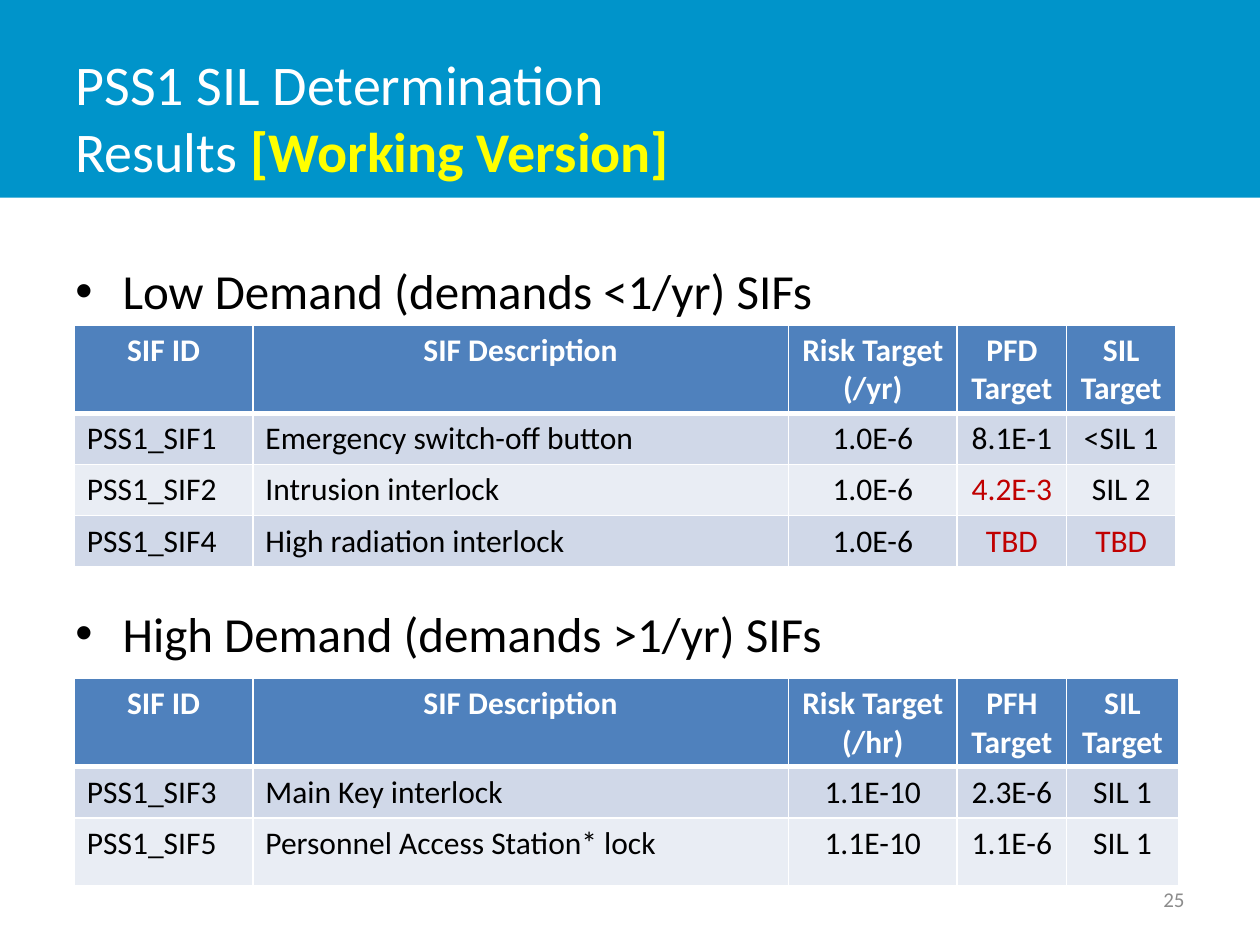
import pptx
import pptx.util
import pptx.dml.color
import pptx.enum.shapes
import pptx.enum.text
import pptx.oxml
import pptx.oxml.ns

Pt = pptx.util.Pt
ALIGN = pptx.enum.text.PP_ALIGN
ANCHOR = pptx.enum.text.MSO_ANCHOR
WHITE, BLACK, RED = "FFFFFF", "000000", "C00000"
HEAD, BANDS = "4F81BD", ("D0D8E8", "E9EDF4")


def color(text):
    return pptx.dml.color.RGBColor.from_string(text)


def node(xml):
    """Parse one drawing element, given without its namespace declaration."""
    tag, rest = xml.split(" ", 1)
    return pptx.oxml.parse_xml(f"{tag} {pptx.oxml.ns.nsdecls('a')} {rest}")


class Deck:
    """Holds the text style and the current slide."""

    base = {"name": "Calibri", "size": Pt(18), "bold": False, "color": BLACK}

    def __init__(self, wide, high):
        self.file = pptx.Presentation()
        self.file.slide_width, self.file.slide_height = Pt(wide), Pt(high)
        self.slide = self.file.slides.add_slide(self.file.slide_layouts[6])

    def style(self, font, **form):
        for key, value in {**self.base, **form}.items():
            if key == "color":
                font.color.rgb = color(value)
            else:
                setattr(font, key, value)

    def run(self, para, text, **form):
        run = para.add_run()
        run.text = text
        self.style(run.font, **form)

    def band(self, *area, fill):
        kind = pptx.enum.shapes.MSO_SHAPE.RECTANGLE
        shape = self.slide.shapes.add_shape(kind, *map(Pt, area))
        shape.shadow.inherit = False
        shape.fill.solid()
        shape.fill.fore_color.rgb = color(fill)
        shape.line.fill.background()

    def box(self, *area, anchor=ANCHOR.TOP):
        frame = self.slide.shapes.add_textbox(*map(Pt, area)).text_frame
        frame.word_wrap = True
        frame.vertical_anchor = anchor
        return frame

    def bullets(self, frame, items, gap, **form):
        for i, text in enumerate(items):
            para = frame.add_paragraph() if i else frame.paragraphs[0]
            if i:
                para.space_before = Pt(gap)
            props = para._p.get_or_add_pPr()
            props.set("marL", str(Pt(27)))
            props.set("indent", str(-Pt(27)))
            props.append(node('<a:buFont typeface="Arial"/>'))
            props.append(node('<a:buChar char="•"/>'))
            self.run(para, text, **form)

    def edges(self, cell, **widths):
        props = cell._tc.get_or_add_tcPr()
        for i, side in enumerate("LRTB"):
            width = Pt(widths.get(side, 1))
            props.insert(i, node(
                f'<a:ln{side} w="{width}"><a:solidFill>'
                f'<a:srgbClr val="{WHITE}"/></a:solidFill></a:ln{side}>'))

    def table(self, left, top, cols, highs, rows, marks=()):
        """Draw a banded table; marks lists the (row, column) cells in red."""
        grid = self.slide.shapes.add_table(
            len(rows), len(cols), Pt(left), Pt(top),
            Pt(sum(cols)), Pt(sum(highs))).table
        for col, wide in zip(grid.columns, cols):
            col.width = Pt(wide)
        for r, (high, row) in enumerate(zip(highs, rows)):
            grid.rows[r].height = Pt(high)
            for c, text in enumerate(row):
                cell = grid.cell(r, c)
                cell.fill.solid()
                cell.fill.fore_color.rgb = color(BANDS[(r - 1) % 2] if r else HEAD)
                self.edges(cell, T=3 if r == 1 else 1, B=1 if r else 3)
                para = cell.text_frame.paragraphs[0]
                para.alignment = ALIGN.CENTER if r == 0 or c > 1 else ALIGN.LEFT
                ink = RED if (r, c) in marks else BLACK if r else WHITE
                self.run(para, text, color=ink, bold=r == 0)


def heads(unit, rate):
    return ["SIF ID", "SIF Description", f"Risk Target (/{unit})",
            f"{rate} Target", "SIL Target"]


def main():
    deck = Deck(720, 540)
    deck.band(0, 0, 720, 113, fill="0094CA")

    title = deck.box(36, 21.6, 562, 90, anchor=ANCHOR.MIDDLE).paragraphs[0]
    deck.run(title, "PSS1 SIL Determination", size=Pt(32), color=WHITE)
    title.add_line_break()
    deck.run(title, "Results ", size=Pt(32), color=WHITE)
    deck.run(title, "[Working Version]", size=Pt(32), color="FFFF00", bold=True)

    page = deck.box(516, 499, 168, 29, anchor=ANCHOR.MIDDLE).paragraphs[0]
    page.alignment = ALIGN.RIGHT
    deck.run(page, "25", size=Pt(12), color="8C8C8C")

    body = deck.box(36, 145.5, 648, 356)
    deck.bullets(body, ["Low Demand (demands <1/yr) SIFs",
                        "High Demand (demands >1/yr) SIFs"], 162, size=Pt(28))

    cols = [102, 306, 96.5, 62.5]
    deck.table(42.5, 185.8, cols + [62.5], [50.5, 29.2, 29.2, 29.2], [
        heads("yr", "PFD"),
        ["PSS1_SIF1", "Emergency switch-off button", "1.0E-6", "8.1E-1", "<SIL 1"],
        ["PSS1_SIF2", "Intrusion interlock", "1.0E-6", "4.2E-3", "SIL 2"],
        ["PSS1_SIF4", "High radiation interlock", "1.0E-6", "TBD", "TBD"],
    ], marks=[(2, 3), (3, 3), (3, 4)])
    deck.table(42.5, 387.7, cols + [64], [50.5, 29.2, 38.5], [
        heads("hr", "PFH"),
        ["PSS1_SIF3", "Main Key interlock", "1.1E-10", "2.3E-6", "SIL 1"],
        ["PSS1_SIF5", "Personnel Access Station* lock", "1.1E-10", "1.1E-6", "SIL 1"],
    ])
    deck.file.save("out.pptx")


if __name__ == "__main__":
    main()
